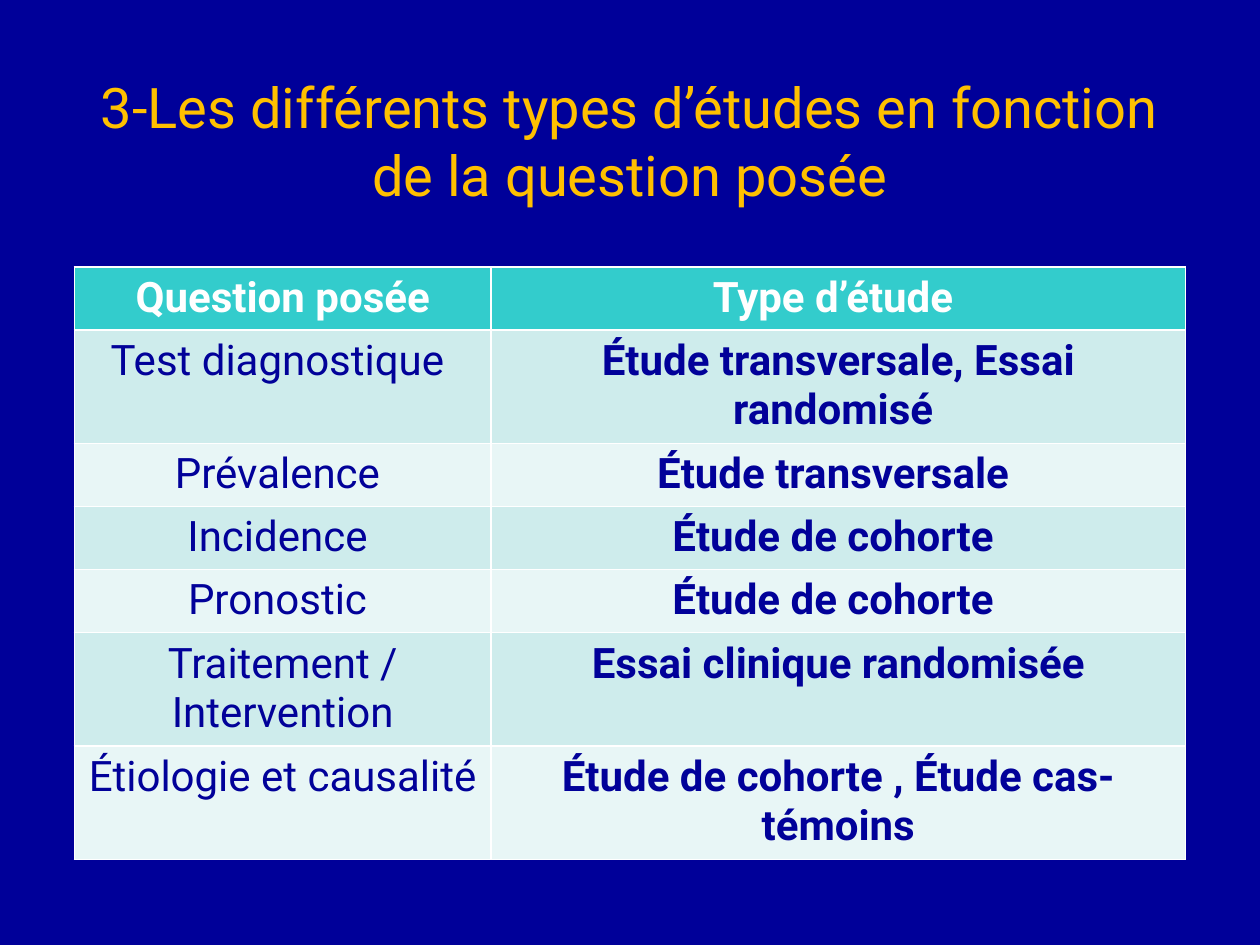
from pptx import Presentation
from pptx import util as u
from pptx.dml import color
from pptx.enum import text

COLORS = {
    "background": "000099",
    "title": "FFC000",
    "header": "33CCCC",
    "header_text": "FFFFFF",
    "odd_row": "CEECEC",
    "even_row": "E8F6F6",
    "body_text": "010199",
}
FONT = "Roboto"
STUDY_TYPES = [
    ("Question posée", "Type d’étude "),
    ("Test diagnostique ", "Étude transversale, Essai randomisé "),
    ("Prévalence ", "Étude transversale "),
    ("Incidence ", "Étude de cohorte "),
    ("Pronostic ", "Étude de cohorte "),
    ("Traitement / Intervention", "Essai clinique randomisée"),
    ("Étiologie et causalité", "Étude de cohorte , Étude cas-témoins"),
]


def rgb(name):
    """Return the named palette colour."""
    return color.RGBColor.from_string(COLORS[name])


def style_paragraph(paragraph, size, ink, bold):
    """Centre a paragraph and set its font."""
    paragraph.alignment = text.PP_ALIGN.CENTER
    font = paragraph.font
    font.name, font.size, font.bold = FONT, u.Pt(size), bold
    font.color.rgb = rgb(ink)


def add_heading(slide, left, top, width, height):
    """Fill and place the title placeholder."""
    heading = slide.shapes.title
    heading.left, heading.top = u.Pt(left), u.Pt(top)
    heading.width, heading.height = u.Pt(width), u.Pt(height)
    frame = heading.text_frame
    frame.text = "3-Les différents types d’études en fonction de la question posée"
    frame.word_wrap = True
    frame.auto_size = text.MSO_AUTO_SIZE.SHAPE_TO_FIT_TEXT
    frame.vertical_anchor = text.MSO_ANCHOR.MIDDLE
    style_paragraph(frame.paragraphs[0], 32, "title", False)


def add_study_table(slide, left, top, width, row_height):
    """Match each research question with its study type in a table."""
    count = len(STUDY_TYPES)
    studies = slide.shapes.add_table(
        count, 2, u.Pt(left), u.Pt(top), u.Pt(width), u.Pt(row_height * count)
    ).table
    question_width = width * 0.375
    studies.columns[0].width = u.Pt(question_width)
    studies.columns[1].width = u.Pt(width - question_width)
    for row, entries in enumerate(STUDY_TYPES):
        is_header = row == 0
        band = "header" if is_header else ("even_row", "odd_row")[row % 2]
        ink = "header_text" if is_header else "body_text"
        for column, entry in enumerate(entries):
            cell = studies.cell(row, column)
            cell.text = entry
            cell.fill.solid()
            cell.fill.fore_color.rgb = rgb(band)
            bold = is_header or column == 1
            style_paragraph(cell.text_frame.paragraphs[0], 24, ink, bold)


def main():
    """Build and save the slide."""
    deck = Presentation()
    deck.slide_width, deck.slide_height = u.Pt(720), u.Pt(540)
    slide = deck.slides.add_slide(deck.slide_layouts[5])
    slide.background.fill.solid()
    slide.background.fill.fore_color.rgb = rgb("background")
    add_heading(slide, 42.5, 37.5, 635, 85)
    add_study_table(slide, 42.5, 152.6, 635, 29.5)
    deck.save("out.pptx")


if __name__ == "__main__":
    main()
